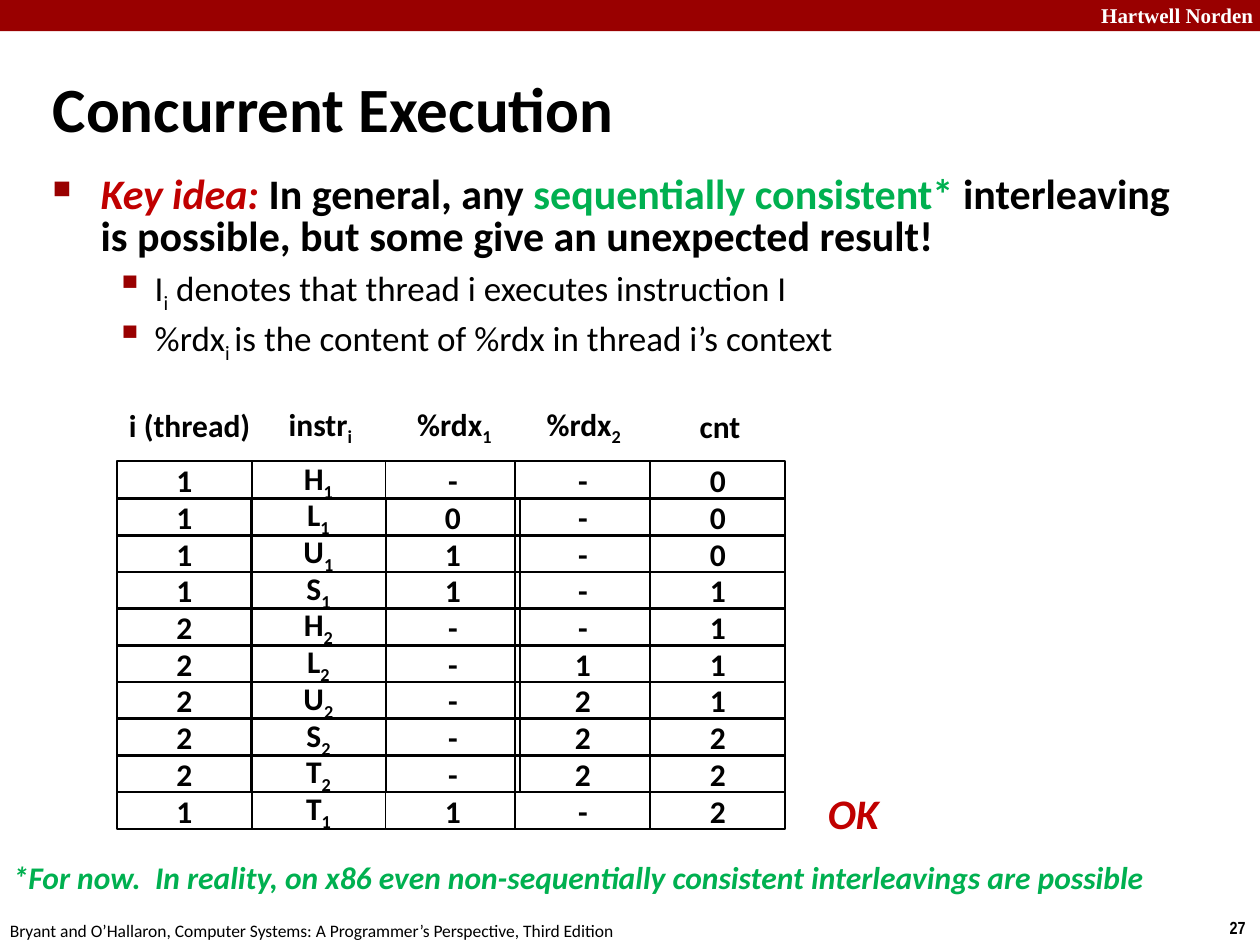
from lxml.etree import SubElement
from pptx import Presentation
from pptx.dml.color import RGBColor
from pptx.enum.shapes import MSO_SHAPE
from pptx.enum.text import MSO_ANCHOR, MSO_AUTO_SIZE, PP_ALIGN
from pptx.oxml.ns import qn
from pptx.util import Cm, Pt

COLORS = {
    "black": "000000",
    "white": "FFFFFF",
    "bar": "990000",
    "red": "C00000",
    "green": "00B050",
}
TITLE = {"name": "Calibri", "size": Pt(36), "bold": True, "color": "black"}
KEY = {"name": "Calibri", "size": Pt(24), "bold": True, "color": "black"}
DETAIL = {"name": "Calibri", "size": Pt(20), "bold": False, "color": "black"}
CELL = {"name": "Calibri", "size": Pt(18), "bold": True, "color": "black"}
SMALL = {"name": "Calibri", "size": Pt(10), "bold": False, "color": "black"}
NUMBER = {"name": "Arial Narrow", "size": Pt(10), "bold": True, "color": "black"}
SCHOOL = {"name": "Times New Roman", "size": Pt(12), "bold": True, "color": "white"}
VERDICT = KEY | {"color": "red", "italic": True}
FOOTNOTE = CELL | {"color": "green", "italic": True}
SUBSCRIPT = {"baseline": "-25000"}


def add_runs(paragraph, runs, base):
    """Add (text, changes) runs that share the base format."""
    for text, changes in runs:
        run = paragraph.add_run()
        run.text = text
        for attribute, value in (base | changes).items():
            if attribute == "color":
                run.font.color.rgb = RGBColor.from_string(COLORS[value])
            elif attribute == "baseline":
                run._r.get_or_add_rPr().set("baseline", value)
            else:
                setattr(run.font, attribute, value)


def add_label(slide, box, runs, base, align, anchor):
    """Add a one-line text box; box is left, top, width, height in cm."""
    frame = slide.shapes.add_textbox(*map(Cm, box)).text_frame
    frame.word_wrap = False
    frame.vertical_anchor = anchor
    frame.paragraphs[0].alignment = align
    add_runs(frame.paragraphs[0], runs, base)


presentation = Presentation()
presentation.slide_width = Cm(25.4)
presentation.slide_height = Cm(19.05)
slide = presentation.slides.add_slide(presentation.slide_layouts[5])

# Top bar
bar = slide.shapes.add_shape(MSO_SHAPE.RECTANGLE, 0, 0, presentation.slide_width, Cm(0.63))
bar.shadow.inherit = False
bar.fill.solid()
bar.fill.fore_color.rgb = RGBColor.from_string(COLORS["bar"])
bar.line.fill.background()

# School name, page number and book credit
CREDIT = "Bryant and O’Hallaron, Computer Systems: A Programmer’s Perspective, Third Edition"
for box, text, base in (
    ((21.95, -0.08, 3.63, 0.76), "Hartwell Norden", SCHOOL),
    ((24.54, 18.36, 0.86, 0.69), "27", NUMBER),
    ((-0.05, 18.42, 12.9, 0.69), CREDIT, SMALL),
):
    add_label(slide, box, [(text, {})], base, PP_ALIGN.LEFT, MSO_ANCHOR.TOP)

# Title
title = slide.shapes.title
title.left, title.top, title.width, title.height = map(Cm, (0.81, 1.37, 18.39, 1.6))
title.text_frame.auto_size = MSO_AUTO_SIZE.NONE
title.text_frame.vertical_anchor = MSO_ANCHOR.MIDDLE
title.text_frame.paragraphs[0].alignment = PP_ALIGN.LEFT
add_runs(title.text_frame.paragraphs[0], [("Concurrent Execution", {})], TITLE)

# Bulleted text: level, left margin, hang, line spacing, space before, bullet, size, format, runs
BULLETS = [
    (0, 0.97, 0.97, 0.85, 4.8, "■", 60, KEY, [
        ("Key idea: ", {"color": "red", "italic": True}),
        ("In general, any ", {}),
        ("sequentially consistent* ", {"color": "green"}),
        ("interleaving is possible, but some give an unexpected result!", {}),
    ]),
    (1, 2.06, 0.79, 0.9, 4, "▪", 110, DETAIL, [
        ("I", {}),
        ("i", SUBSCRIPT),
        (" denotes that thread i executes instruction I", {}),
    ]),
    (1, 2.06, 0.79, 0.9, 4, "▪", 110, DETAIL, [
        ("%rdx", {}),
        ("i ", SUBSCRIPT),
        ("is the content of %rdx in thread i’s context", {}),
    ]),
]
body = slide.shapes.add_textbox(Cm(0.81), Cm(3.4), Cm(23.09), Cm(4.04)).text_frame
body.word_wrap = True
for index, (level, margin, hang, spacing, before, bullet, size, base, runs) in enumerate(BULLETS):
    paragraph = body.add_paragraph() if index else body.paragraphs[0]
    paragraph.level = level
    paragraph.line_spacing = spacing
    paragraph.space_before = Pt(before)
    properties = paragraph._p.get_or_add_pPr()
    properties.set("marL", str(Cm(margin)))
    properties.set("indent", str(-Cm(hang)))
    bullet_color = SubElement(properties, qn("a:buClr"))
    SubElement(bullet_color, qn("a:srgbClr"), val=COLORS["bar"])
    SubElement(properties, qn("a:buSzPct"), val=str(size * 1000))
    SubElement(properties, qn("a:buChar"), char=bullet)
    add_runs(paragraph, runs, base)

# Execution trace: one column of joined boxes per field
COLUMNS = [
    (5.06, ["H1", "L1", "U1", "S1", "H2", "L2", "U2", "S2", "T2", "T1"]),
    (2.36, "1111222221"),
    (7.77, "-011-----1"),
    (13.11, "0001111222"),
    (10.39, "-----1222-"),
]
ROW_TOP, ROW_STEP = 9.3, 0.74
CELL_WIDTH, CELL_HEIGHT = 2.72, 0.76
for left, values in COLUMNS:
    for row, value in enumerate(values):
        top = ROW_TOP + row * ROW_STEP
        cell = slide.shapes.add_shape(
            MSO_SHAPE.RECTANGLE, Cm(left), Cm(top), Cm(CELL_WIDTH), Cm(CELL_HEIGHT))
        cell.shadow.inherit = False
        if row in (0, len(values) - 1):
            cell.fill.solid()
            cell.fill.fore_color.rgb = RGBColor.from_string(COLORS["white"])
        else:
            cell.fill.background()
        cell.line.color.rgb = RGBColor.from_string(COLORS["black"])
        cell.line.width = Pt(1)
        cell.text_frame.vertical_anchor = MSO_ANCHOR.MIDDLE
        paragraph = cell.text_frame.paragraphs[0]
        paragraph.alignment = PP_ALIGN.CENTER
        runs = [(value[0], {})] + [(digit, SUBSCRIPT) for digit in value[1:]]
        add_runs(paragraph, runs, CELL)

# Column headings, verdict and footnote
REMARK = "*For now.  In reality, on x86 even non-sequentially consistent interleavings are possible "
for box, runs, base in (
    ((2.34, 8.05, 2.97, 1.02), [("i (thread)", {})], CELL),
    ((5.56, 8.08, 1.8, 1.02), [("instr", {}), ("i", SUBSCRIPT)], CELL),
    ((8.13, 8.08, 2.06, 1.02), [("%rdx", {}), ("1", SUBSCRIPT)], CELL),
    ((10.74, 8.08, 2.06, 1.02), [("%rdx", {}), ("2", SUBSCRIPT)], CELL),
    ((13.84, 8.08, 1.35, 1.02), [("cnt", {})], CELL),
    ((16.43, 15.75, 1.55, 1.27), [("OK", {})], VERDICT),
    ((-0.05, 17.17, 23.57, 1.02), [(REMARK, {})], FOOTNOTE),
):
    add_label(slide, box, runs, base, PP_ALIGN.CENTER, MSO_ANCHOR.MIDDLE)

presentation.save("out.pptx")
